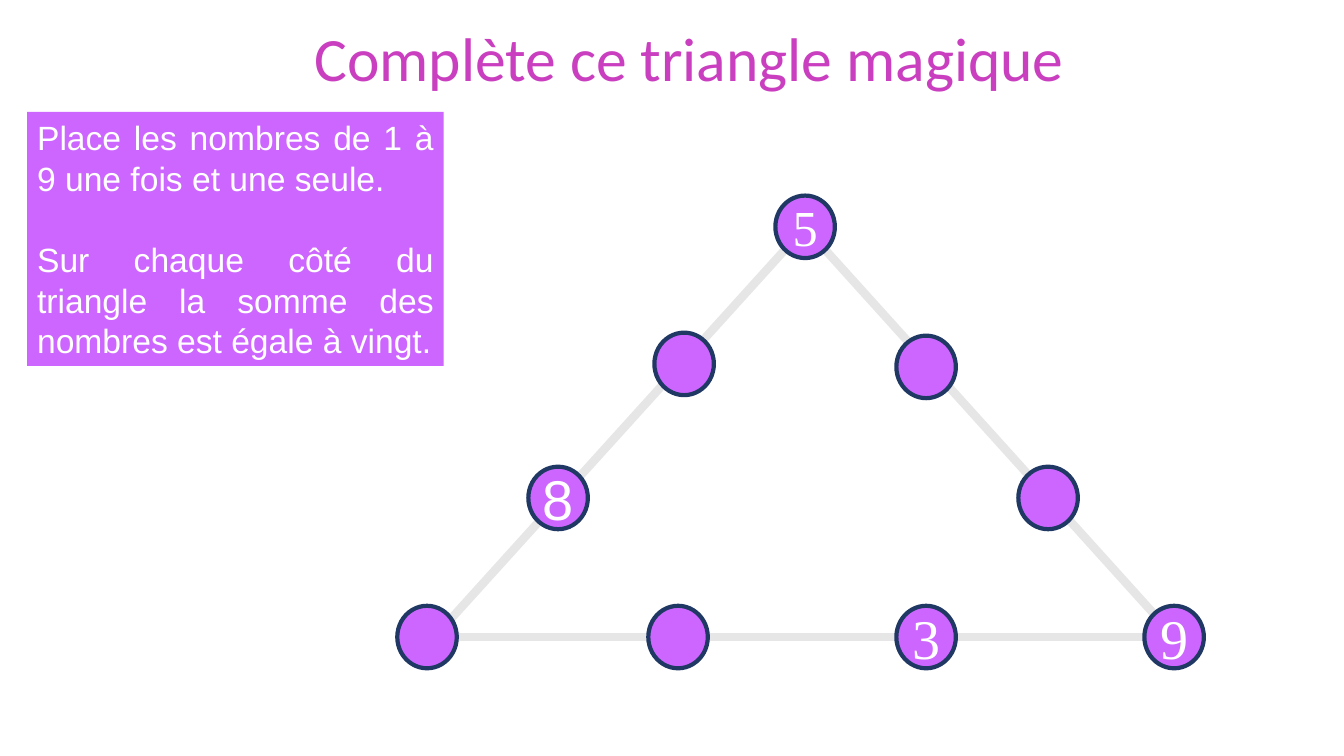
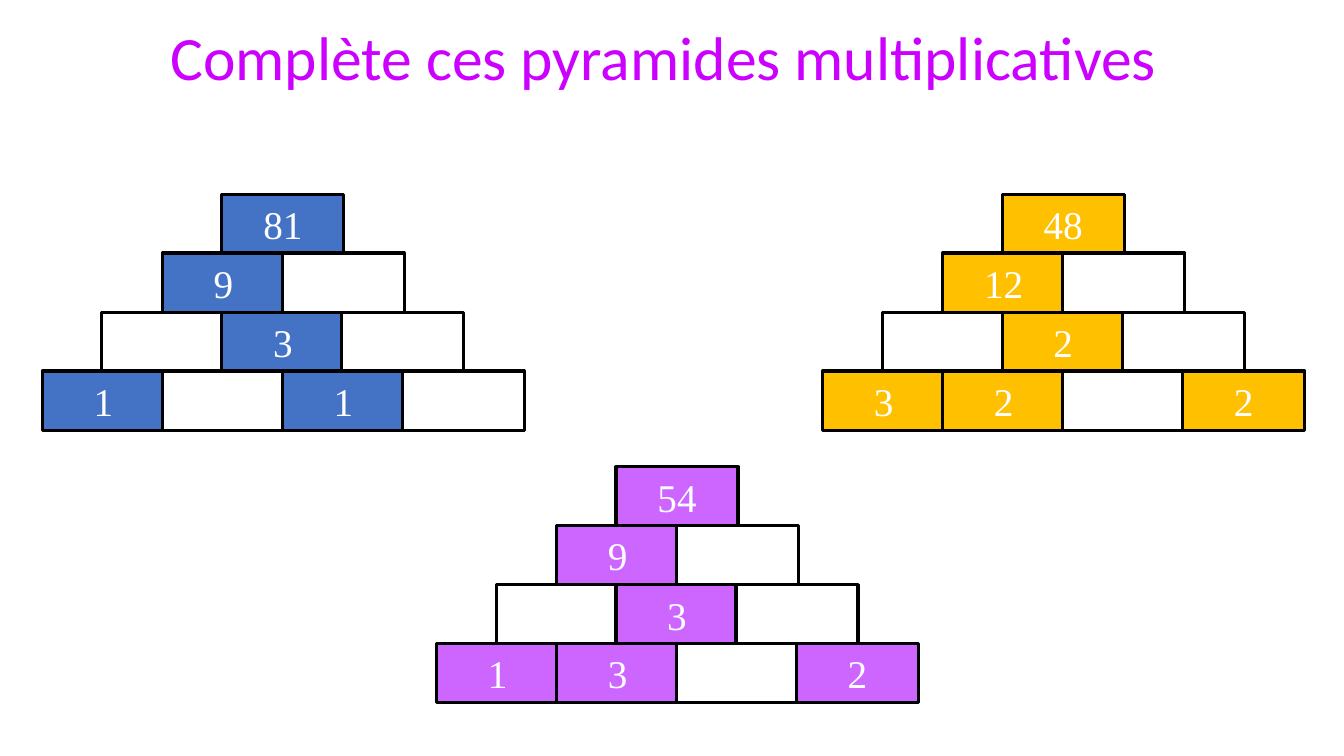
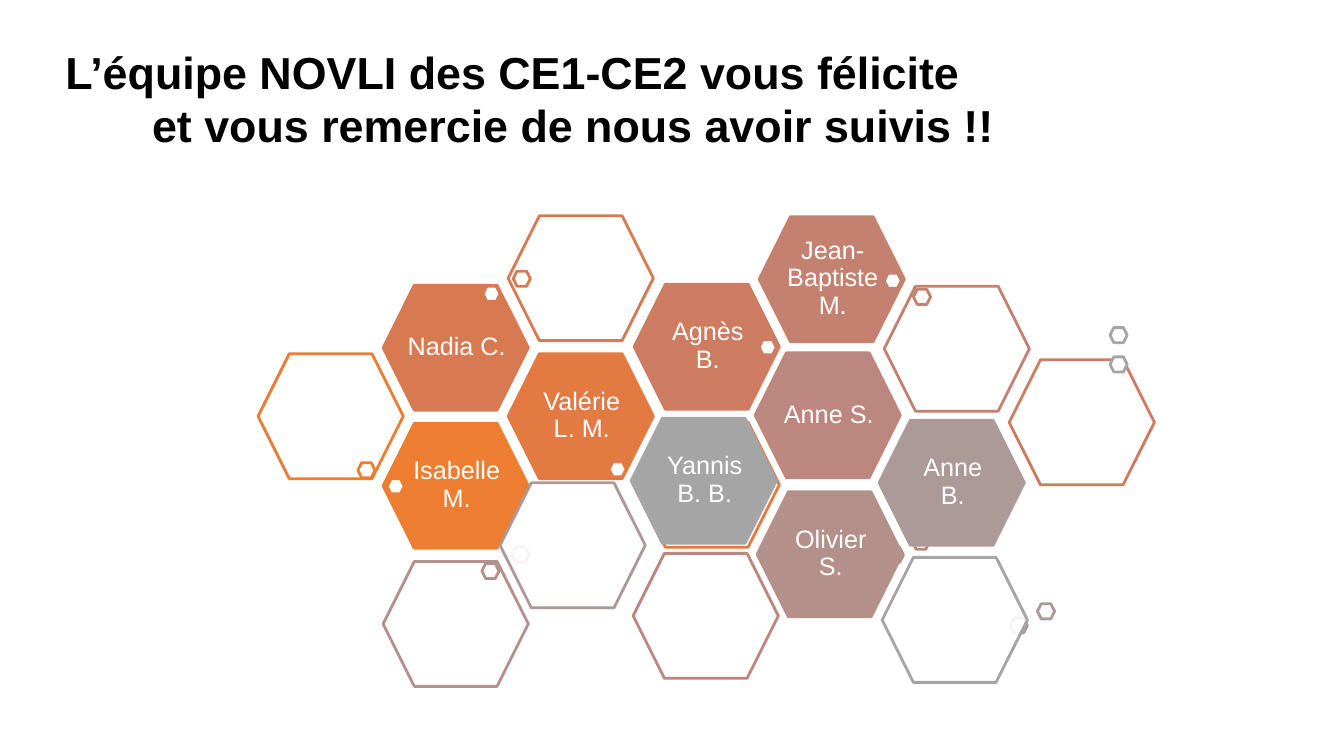
from lxml import etree
from pptx import Presentation
from pptx import util as u
from pptx.dml.color import RGBColor
from pptx.enum import shapes, text
from pptx.oxml.ns import qn

PX = 9144  # 100 px to the inch
INK = {
    "white": "FFFFFF", "black": "000000", "grey": "E7E6E6", "navy": "203864",
    "violet": "CC66FF", "pink": "C93FBF", "purple": "CC00FF",
    "blue": "4472C4", "gold": "FFC000",
    "orange": "ED7D31", "amber": "E27A42", "copper": "D87A51",
    "coral": "CE7C61", "clay": "C48170", "rose": "BC877E",
    "mauve": "B4908B", "ash": "AC9A99", "steel": "A5A5A5",
}
FORM = shapes.MSO_SHAPE
ALIGN = text.PP_ALIGN
MID = text.MSO_ANCHOR.MIDDLE
SERIF = "Times New Roman"


def ink(name):
    return RGBColor.from_string(INK[name])


def write(frame, *lines, size=24, font="Arial", color="white", bold=False,
          align=ALIGN.LEFT, anchor=text.MSO_ANCHOR.TOP, wrap=True,
          inset=None, space=None, after=0, indents=()):
    """Fill a text frame, one paragraph per line; inset is (x, y) in px."""
    frame.word_wrap = wrap
    frame.vertical_anchor = anchor
    if inset:
        frame.margin_left = frame.margin_right = inset[0] * PX
        frame.margin_top = frame.margin_bottom = inset[1] * PX
    for i, line in enumerate(lines):
        para = frame.add_paragraph() if i else frame.paragraphs[0]
        para.text = line
        para.alignment = align
        if space:
            para.line_spacing = space
        if after and i < len(lines) - 1:
            para.space_after = u.Pt(after)
        if indents:
            para._p.get_or_add_pPr().set("marL", str(indents[i] * PX))
        for run in para.runs:
            run.font.size = u.Pt(size)
            run.font.name = font
            run.font.bold = bold
            run.font.color.rgb = ink(color)


class Deck:
    def __init__(self):
        self.prs = Presentation()
        self.prs.slide_width = 1333 * PX
        self.prs.slide_height = 750 * PX

    def page(self):
        layout = self.prs.slide_layouts[6]
        self.items = self.prs.slides.add_slide(layout).shapes

    def label(self, x, y, w, h, *lines, **style):
        box = self.items.add_textbox(x * PX, y * PX, w * PX, h * PX)
        write(box.text_frame, *lines, **style)

    def title(self, x, y, w, words, color):
        self.label(x, y, w, 84, words, size=44, font="Calibri", color=color)

    def shape(self, form, x, y, w, h, fill, edge=None, width=2, alpha=None):
        item = self.items.add_shape(form, x * PX, y * PX, w * PX, h * PX)
        item.shadow.inherit = False
        item.fill.solid()
        item.fill.fore_color.rgb = ink(fill)
        if alpha:
            tint = item.fill._xPr.find(".//" + qn("a:srgbClr"))
            etree.SubElement(tint, qn("a:alpha")).set("val", str(alpha * 1000))
        if edge:
            item.line.color.rgb = ink(edge)
            item.line.width = u.Pt(width)
        else:
            item.line.fill.background()
        return item

    def line(self, x1, y1, x2, y2, color, width):
        rod = self.items.add_connector(
            shapes.MSO_CONNECTOR.STRAIGHT, x1 * PX, y1 * PX, x2 * PX, y2 * PX)
        rod.line.color.rgb = ink(color)
        rod.line.width = u.Pt(width)
        etree.SubElement(rod._element.spPr, qn("a:effectLst"))

    def node(self, x, y, digit, size, font):
        disc = self.shape(FORM.OVAL, x, y, 59, 62, "violet", "navy", 3)
        if digit:
            write(disc.text_frame, digit, size=size, font=font, wrap=False,
                  align=ALIGN.CENTER, anchor=MID, inset=(0, 0))

    def pyramid(self, left, top, color, rows):
        """Stack brick rows; an empty string leaves a white brick."""
        for r, row in enumerate(rows):
            for c, num in enumerate(row):
                x = left + 119 * c + 119 * (len(rows) - 1 - r) // 2
                y = top + 117 * r // 2
                brick = self.shape(FORM.RECTANGLE, x, y, 121, 59,
                                   color if num else "white", "black", 2.25)
                if num:
                    write(brick.text_frame, num, size=28, font=SERIF,
                          align=ALIGN.CENTER, anchor=MID)

    def cell(self, x, y, fill, edge, alpha=None):
        self.shape(FORM.HEXAGON, x, y, 144, 124, fill, edge, alpha=alpha)

    def dot(self, x, y, edge):
        self.shape(FORM.HEXAGON, x, y, 17, 15, "white", edge)

    def member(self, name, color, full, dot, empty, ring):
        """Named hexagon and its empty partner, each with a small dot."""
        x, y = full
        self.cell(x, y, color, color)
        self.label(x + 23, y + 19, 100, 85, name, size=18, space=0.9,
                   align=ALIGN.CENTER, anchor=MID, inset=(0, 3))
        self.dot(*dot, color)
        self.cell(*empty, "white", color, alpha=90)
        self.dot(*ring, color)


def triangle(deck):
    deck.page()
    for ends in ((778, 203, 1185, 654), (819, 203, 411, 654),
                 (1194, 632, 403, 632)):
        deck.line(*ends, "grey", 6)
    for x, y, digit, size, font in (
            (769, 194, "5", 36, SERIF), (649, 330, "", 0, ""),
            (524, 463, "8", 40, "Arial"), (889, 333, "", 0, ""),
            (1010, 463, "", 0, ""), (394, 601, "", 0, ""),
            (643, 601, "", 0, ""), (889, 601, "3", 40, SERIF),
            (1135, 601, "9", 40, SERIF)):
        deck.node(x, y, digit, size, font)
    rules = deck.shape(FORM.RECTANGLE, 27, 111, 413, 252, "violet")
    write(rules.text_frame,
          "Place les nombres de 1 à 9 une fois et une seule.",
          "Sur chaque côté du triangle la somme des nombres est égale à vingt.",
          align=ALIGN.JUSTIFY, space=u.Pt(29), after=29)
    deck.title(302, 15, 847, "Complète ce triangle magique", "pink")


def pyramids(deck):
    deck.page()
    deck.title(159, 14, 1081, "Complète ces pyramides multiplicatives",
               "purple")
    for left, top, color, rows in (
            (42, 193, "blue",
             (["81"], ["9", ""], ["", "3", ""], ["1", "", "1", ""])),
            (816, 193, "gold",
             (["48"], ["12", ""], ["", "2", ""], ["3", "2", "", "2"])),
            (433, 463, "violet",
             (["54"], ["9", ""], ["", "3", ""], ["1", "3", "", "2"]))):
        deck.pyramid(left, top, color, rows)


def team(deck):
    deck.page()
    for row in (
            ("Isabelle M.", "orange", (380, 420), (384, 475),
             (256, 351), (355, 459)),
            ("Valérie\nL. M.", "amber", (504, 351), (604, 458),
             (629, 419), (632, 475)),
            ("Nadia C.", "copper", (380, 283), (479, 284),
             (504, 214), (509, 269)),
            ("Agnès\nB.", "coral", (629, 282), (753, 337),
             (1001, 357), (781, 354)),
            ("Jean-Baptiste\nM.", "clay", (753, 215), (877, 271),
             (877, 284), (906, 287)),
            ("Anne S.", "rose", (749, 350), (905, 530),
             (628, 549), (879, 543)),
            ("Olivier S.", "mauve", (751, 488), (508, 543),
             (380, 557), (478, 559)),
            ("Anne\nB.", "ash", (872, 417), (1029, 599),
             (496, 479), (1002, 613)),
            ("Yannis\nB. B.", "steel", (626, 415), (1101, 325),
             (875, 553), (1101, 354))):
        deck.member(*row)
    deck.label(55, 40, 1232, 118,
               "L’équipe NOVLI des CE1-CE2 vous félicite",
               "et vous remercie de nous avoir suivis !!",
               size=32, color="black", bold=True, space=u.Pt(38),
               indents=(0, 86))


def main():
    deck = Deck()
    triangle(deck)
    pyramids(deck)
    team(deck)
    deck.prs.save("out.pptx")


if __name__ == "__main__":
    main()
